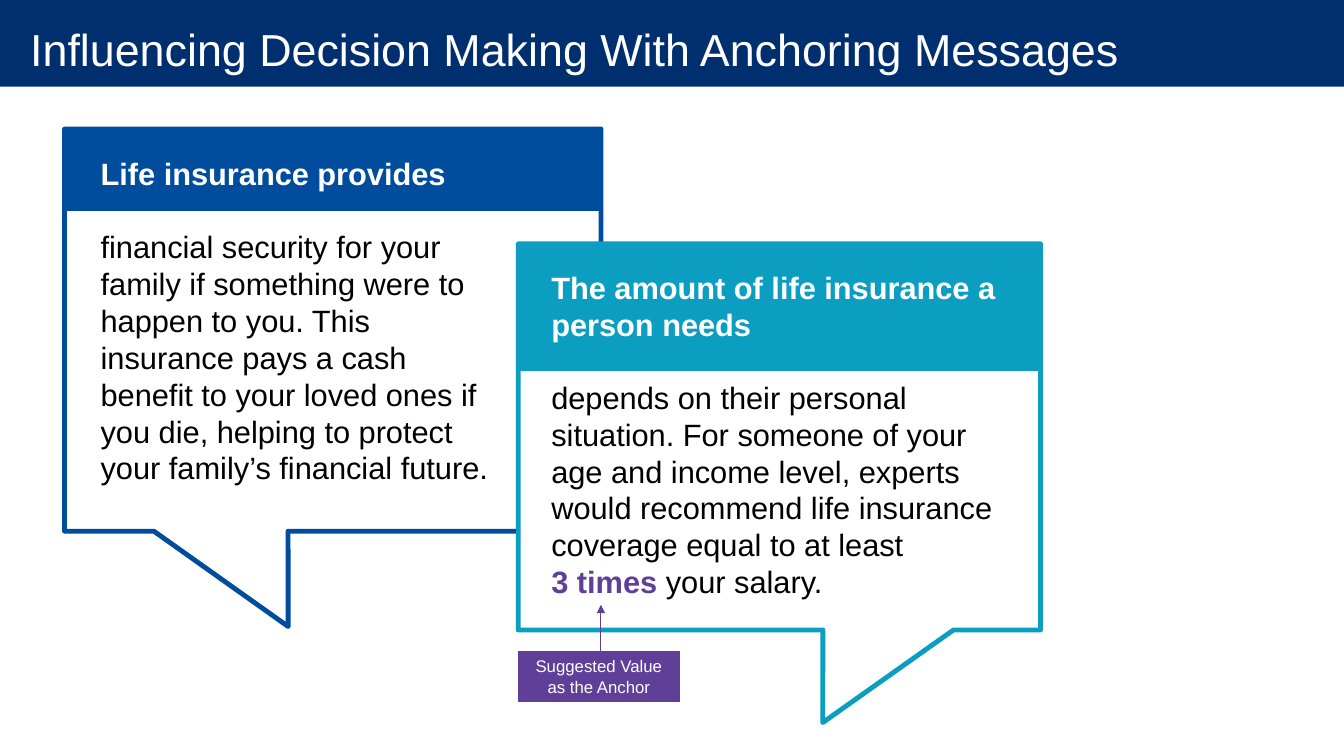
from lxml.etree import SubElement
from pptx import Presentation
from pptx.dml.color import RGBColor
from pptx.enum.shapes import MSO_CONNECTOR as CONNECTOR, MSO_SHAPE as SHAPE
from pptx.enum.text import MSO_ANCHOR as ANCHOR, PP_ALIGN as ALIGN
from pptx.oxml.ns import qn
from pptx.util import Inches, Pt

NAVY, BLUE, TEAL, PURPLE = "002F70", "004C9D", "0B9EC1", "603F99"
WHITE, BLACK = "FFFFFF", "000000"


def color(value):
    return RGBColor.from_string(value)


def add_block(slide, preset, box, fill, line, width):
    block = slide.shapes.add_shape(preset, *map(Inches, box))
    block.shadow.inherit = False
    block.fill.solid()
    block.fill.fore_color.rgb = color(fill)
    block.line.color.rgb = color(line)
    block.line.width = Pt(width)
    return block


def add_text_box(slide, box):
    frame = slide.shapes.add_textbox(*map(Inches, box)).text_frame
    frame.word_wrap = True
    return frame


def add_run(paragraph, text, size, ink, bold=False):
    run = paragraph.add_run()
    run.text = text
    run.font.name = "Arial"
    run.font.size = Pt(size)
    run.font.bold = bold
    run.font.color.rgb = color(ink)


def title_band(slide, left, top, width, height):
    band = add_block(slide, SHAPE.RECTANGLE, (left, top, width, height), NAVY, NAVY, 1)
    band.line.fill.background()
    title = add_text_box(slide, (left, top, width, height + 0.11))
    title.vertical_anchor = ANCHOR.MIDDLE
    title.margin_left, title.margin_right = Inches(0.3), Inches(0.2)
    title.margin_top = title.margin_bottom = 0
    add_run(title.paragraphs[0], "Influencing Decision Making With Anchoring Messages", 32, WHITE)


def message_bubble(slide, box, tail, header, text_inset, text_width, accent, heading, body):
    left, top, width, _ = box
    header_offset, header_height = header
    callout = add_block(slide, SHAPE.RECTANGULAR_CALLOUT, box, WHITE, accent, 3.5)
    callout.adjustments[0], callout.adjustments[1] = tail
    add_block(slide, SHAPE.RECTANGLE,
              (left, top + header_offset, width, header_height), accent, accent, 2)

    message = add_text_box(slide, (left + text_inset[0], top + text_inset[1], text_width, 3.43))
    add_run(message.paragraphs[0], heading, 22, WHITE, True)
    for index, runs in enumerate(body):
        paragraph = message.add_paragraph()
        if index == 0:
            paragraph.space_before = Pt(25.3)
        for text, ink, bold in runs:
            add_run(paragraph, text, 22, ink, bold)


def anchor_note(slide, left, top, width, height):
    arrow_x = left + 0.82
    arrow = slide.shapes.add_connector(
        CONNECTOR.STRAIGHT, *map(Inches, (arrow_x, top + 0.08, arrow_x, top - 0.46)))
    arrow.line.color.rgb = color(PURPLE)
    arrow.line.width = Pt(0.75)
    SubElement(arrow.line._get_or_add_ln(), qn("a:tailEnd"), type="triangle")
    SubElement(arrow._element.spPr, qn("a:effectLst"))

    label = add_block(slide, SHAPE.RECTANGLE, (left, top, width, height), PURPLE, PURPLE, 0.75)
    label.text_frame.word_wrap = True
    paragraph = label.text_frame.paragraphs[0]
    paragraph.alignment = ALIGN.CENTER
    add_run(paragraph, "Suggested Value as the Anchor", 12, WHITE)


def main():
    deck = Presentation()
    deck.slide_width, deck.slide_height = Inches(13.33), Inches(7.5)
    slide = deck.slides.add_slide(deck.slide_layouts[6])

    title_band(slide, 0, 0, 13.33, 0.86)
    message_bubble(
        slide, (0.64, 1.28, 5.32, 3.99), (-0.083, 0.737), (0, 0.8), (0.26, 0.21), 4.17, BLUE,
        "Life insurance provides",
        [[("financial security for your family if something were to happen to you. "
           "This insurance pays a cash benefit to your loved ones if you die, "
           "helping to protect your family’s financial future.", BLACK, False)]])
    message_bubble(
        slide, (5.14, 2.42, 5.18, 3.83), (0.083, 0.74), (0.02, 1.23), (0.23, 0.2), 4.83, TEAL,
        "The amount of life insurance a person needs",
        [[("depends on their personal situation. For someone of your age and income level, "
           "experts would recommend life insurance coverage equal to at least", BLACK, False)],
         [("3 times ", PURPLE, True), ("your salary.", BLACK, False)]])
    anchor_note(slide, 5.14, 6.46, 1.6, 0.5)

    deck.save("out.pptx")


if __name__ == "__main__":
    main()
